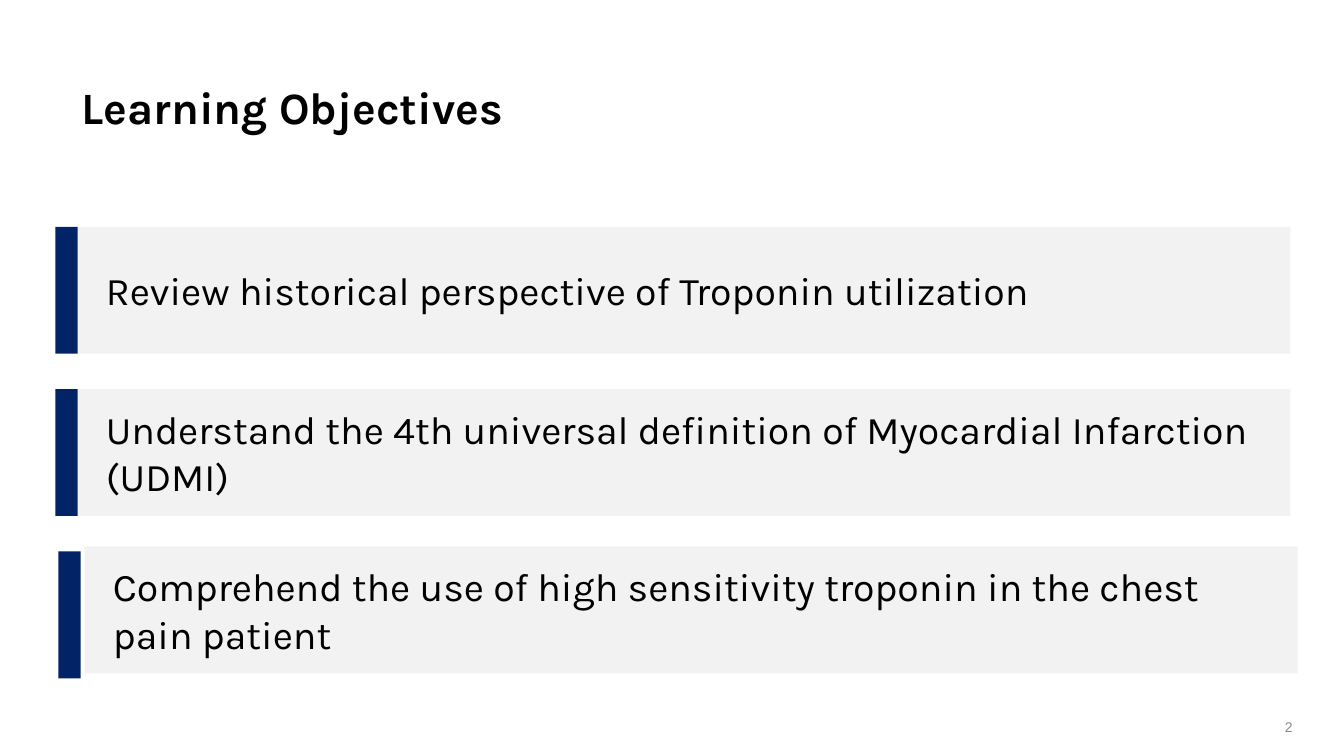
from pptx import Presentation
from pptx.dml.color import RGBColor
from pptx.enum.shapes import MSO_SHAPE
from pptx.enum.text import MSO_ANCHOR, PP_ALIGN
from pptx.util import Inches, Pt

# Content: objective, panel left, panel top, bar left, bar top
TITLE = "Learning Objectives"
NUMBER = "2"
GOALS = [
    ("Review historical perspective of Troponin utilization", 0.77, 2.25, 0.55, 2.25),
    ("Understand the 4th universal definition of Myocardial Infarction (UDMI)", 0.77, 3.86, 0.55, 3.86),
    ("Comprehend the use of high sensitivity troponin in the chest pain patient", 0.84, 5.42, 0.58, 5.47),
]
COLORS = {"text": "000000", "panel": "F2F2F2", "bar": "022366", "number": "888888"}
PANEL_W, BAR_W, ROW_H = 12.03, 0.22, 1.26

deck = Presentation()
deck.slide_width, deck.slide_height = Inches(13.33), Inches(7.5)
slide = deck.slides.add_slide(deck.slide_layouts[6])


def write(shape, text, size, color="text", font="Karla", bold=False,
          align=PP_ALIGN.LEFT, anchor=MSO_ANCHOR.MIDDLE, insets=(0, 0, 0, 0)):
    frame = shape.text_frame
    frame.text = text
    frame.word_wrap = True
    frame.vertical_anchor = anchor
    (frame.margin_left, frame.margin_top,
     frame.margin_right, frame.margin_bottom) = map(Inches, insets)
    para = frame.paragraphs[0]
    para.alignment = align
    style = para.runs[0].font
    style.name, style.size, style.bold = font, Pt(size), bold
    style.color.rgb = RGBColor.from_string(COLORS[color])
    return para


def add_text(left, top, width, height):
    return slide.shapes.add_textbox(*map(Inches, (left, top, width, height)))


def add_rect(left, top, width, color):
    rect = slide.shapes.add_shape(
        MSO_SHAPE.RECTANGLE, *map(Inches, (left, top, width, ROW_H)))
    rect.shadow.inherit = False
    rect.fill.solid()
    rect.fill.fore_color.rgb = RGBColor.from_string(COLORS[color])
    rect.line.fill.background()
    return rect


# Title and slide number
title = write(add_text(0.81, 0.85, 10.89, 0.53), TITLE, 32, bold=True,
              anchor=MSO_ANCHOR.TOP)
title.line_spacing = 0.9
write(add_text(12.27, 7.13, 0.55, 0.17), NUMBER, 10, "number", "Arial",
      align=PP_ALIGN.RIGHT)

# Objective panels, each with an accent bar
for goal, left, top, bar_left, bar_top in GOALS:
    panel = add_rect(left, top, PANEL_W, "panel")
    write(panel, goal, 28, insets=(0.28, 0.07, 0.13, 0.07))
    add_rect(bar_left, bar_top, BAR_W, "bar")

deck.save("out.pptx")
